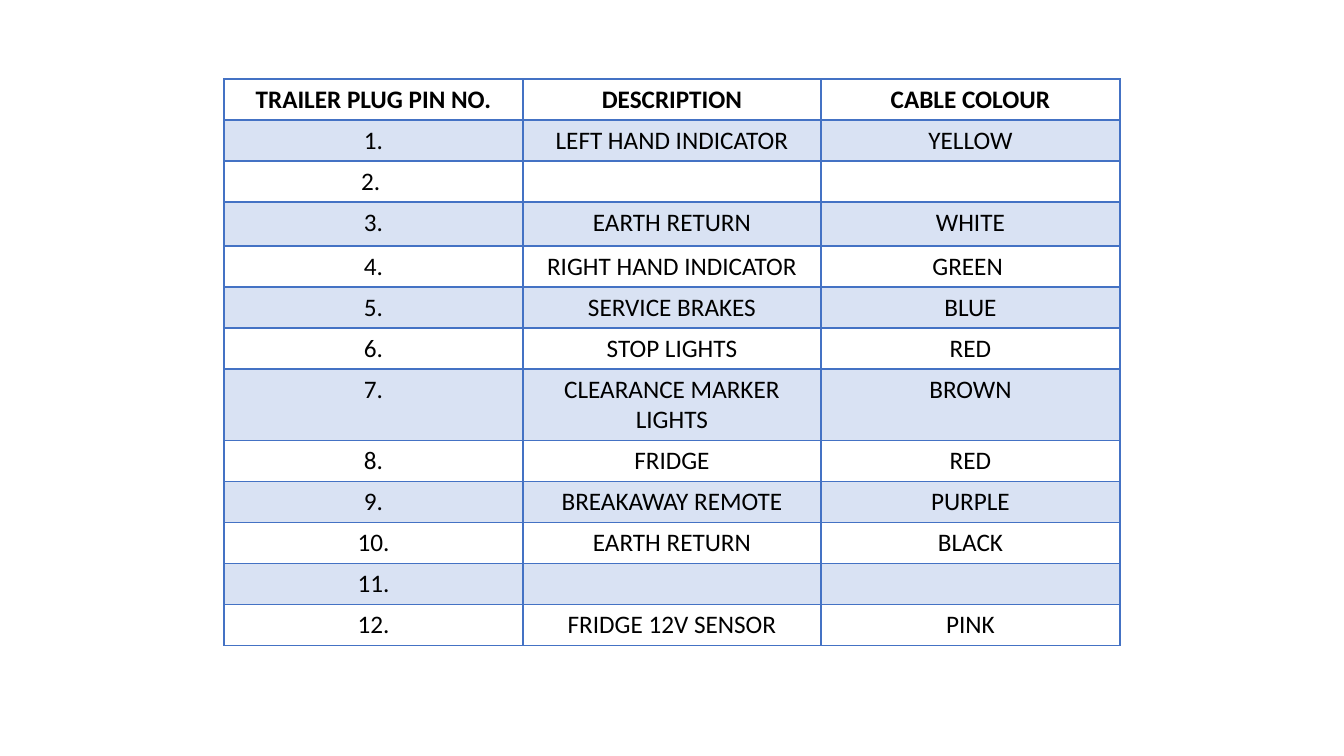
from lxml.etree import SubElement
from pptx import Presentation
from pptx.dml.color import RGBColor
from pptx.enum.text import PP_ALIGN
from pptx.oxml.ns import qn
from pptx.util import Pt

PX = 914400 / 100.8
COLORS = {"text": "000000", "accent": "4472C4"}
LEFT, TOP = 224, 79
WIDTHS = [299, 298, 299]
ROW, TALL, DOUBLE = 41, 44, 71

PINS = [
    ("TRAILER PLUG PIN NO.", "DESCRIPTION", "CABLE COLOUR"),
    ("1.", "LEFT HAND INDICATOR", "YELLOW"),
    ("2. ", "", ""),
    ("3.", "EARTH RETURN", "WHITE"),
    ("4.", "RIGHT HAND INDICATOR", "GREEN "),
    ("5.", "SERVICE BRAKES", "BLUE"),
    ("6.", "STOP LIGHTS", "RED"),
    ("7.", "CLEARANCE MARKER LIGHTS", "BROWN"),
    ("8.", "FRIDGE", "RED"),
    ("9.", "BREAKAWAY REMOTE", "PURPLE"),
    ("10.", "EARTH RETURN", "BLACK"),
    ("11.", "", ""),
    ("12.", "FRIDGE 12V SENSOR", "PINK"),
]


def emu(px):
    return round(px * PX)


def write(cell, text, size=18, bold=False, color="text"):
    para = cell.text_frame.paragraphs[0]
    para.alignment = PP_ALIGN.CENTER
    if text:
        run = para.add_run()
        run.text = text
        font = run.font
        font.name, font.size, font.bold = "Calibri", Pt(size), bold
        font.color.rgb = RGBColor.from_string(COLORS[color])


deck = Presentation()
deck.slide_width, deck.slide_height = emu(1344), emu(756)
slide = deck.slides.add_slide(deck.slide_layouts[6])

heights = [ROW] * len(PINS)
heights[3], heights[7] = TALL, DOUBLE
frame = slide.shapes.add_table(len(PINS), len(WIDTHS), emu(LEFT), emu(TOP),
                               emu(sum(WIDTHS)), emu(sum(heights)))
table = frame.table
table.first_row = table.horz_banding = False
for col, width in zip(table.columns, WIDTHS):
    col.width = emu(width)
for row, height in zip(table.rows, heights):
    row.height = emu(height)

for r, pin in enumerate(PINS):
    for c, text in enumerate(pin):
        cell = table.cell(r, c)
        write(cell, text, bold=r == 0)

        props = cell._tc.get_or_add_tcPr()
        for side in "LRTB":
            weight = 2 if r == 0 and side == "B" else 1
            line = SubElement(props, qn(f"a:ln{side}"), w=str(Pt(weight)))
            paint = SubElement(line, qn("a:solidFill"))
            SubElement(paint, qn("a:srgbClr"), val=COLORS["accent"])

        if r % 2:
            cell.fill.solid()
            cell.fill.fore_color.rgb = RGBColor.from_string(COLORS["accent"])
            tint = props.find(qn("a:solidFill")).find(qn("a:srgbClr"))
            SubElement(tint, qn("a:alpha"), val="20000")
        else:
            cell.fill.background()

deck.save("out.pptx")
